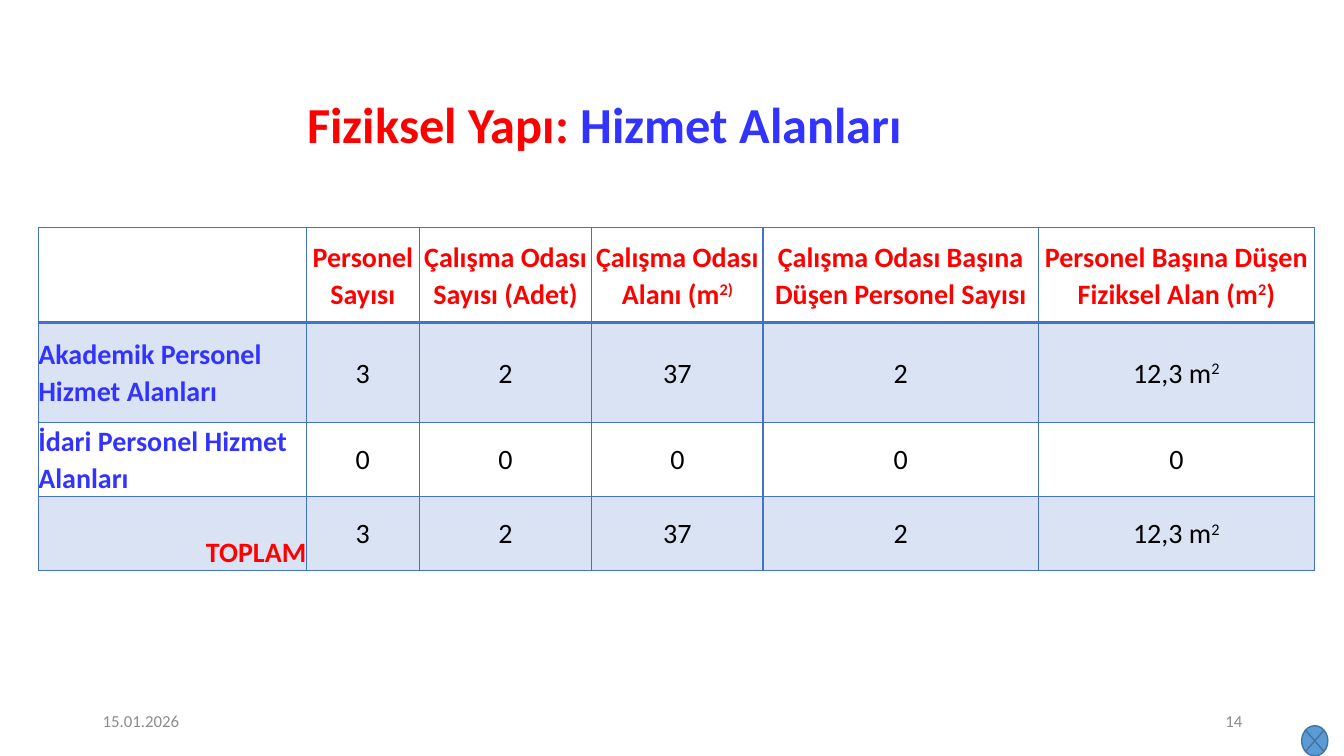
import pptx
import pptx.util
import pptx.dml.color
import pptx.enum.shapes
import pptx.enum.text
import pptx.oxml
import pptx.oxml.ns

RGB = pptx.dml.color.RGBColor
RED = RGB(0xFF, 0x00, 0x00)
BLUE = RGB(0x33, 0x33, 0xFF)
BLACK = RGB(0x00, 0x00, 0x00)
GRAY = RGB(0x8C, 0x8C, 0x8C)
BAND = RGB(0xDA, 0xE3, 0xF3)
BORDER = RGB(0x44, 0x72, 0xC4)
MARK_FILL = RGB(0x5B, 0x9B, 0xD5)
MARK_LINE = RGB(0x43, 0x73, 0x9E)

WIDTH = pptx.util.Inches(13.33)
HEIGHT = pptx.util.Inches(7.5)
ALIGN = pptx.enum.text.PP_ALIGN
ANCHOR = pptx.enum.text.MSO_ANCHOR

COLUMNS = [19.95, 8.4, 12.83, 12.75, 20.48, 20.55]
ROWS = [12.53, 13.2, 9.78, 9.78]
CELLS = [
    ["", "Personel Sayısı", "Çalışma Odası Sayısı (Adet)", "Çalışma Odası Alanı (m^2)",
     "Çalışma Odası Başına Düşen Personel Sayısı",
     "Personel Başına Düşen Fiziksel Alan (m^2^)"],
    ["Akademik Personel Hizmet Alanları", "3", "2", "37", "2", "12,3 m^2"],
    ["İdari Personel Hizmet Alanları", "0", "0", "0", "0", "0"],
    ["TOPLAM", "3", "2", "37", "2", "12,3 m^2"],
]


def across(percent):
    return round(WIDTH * percent / 100)


def down(percent):
    return round(HEIGHT * percent / 100)


def place(left, top, width, height):
    return across(left), down(top), across(width), down(height)


def apply(target, values):
    for name, value in values.items():
        setattr(target, name, value)


def add_run(p, text, size, color, bold=False):
    r = p.add_run()
    r.text = text
    apply(r.font, {"name": "Calibri", "size": pptx.util.Pt(size), "bold": bold})
    r.font.color.rgb = color
    return r


def add_text(s, box, runs, size, align, bold=False, spacing=1.0):
    tf = s.shapes.add_textbox(*place(*box)).text_frame
    apply(tf, {"word_wrap": True, "vertical_anchor": ANCHOR.MIDDLE})
    p = tf.paragraphs[0]
    apply(p, {"alignment": align, "line_spacing": spacing})
    for text, color in runs:
        add_run(p, text, size, color, bold)


def add_mark(s, box):
    sp = s.shapes.add_shape(
        pptx.enum.shapes.MSO_SHAPE.FLOWCHART_SUMMING_JUNCTION, *place(*box))
    sp.shadow.inherit = False
    sp.fill.solid()
    sp.fill.fore_color.rgb = MARK_FILL
    sp.line.color.rgb = MARK_LINE
    sp.line.width = pptx.util.Pt(1)


def set_borders(cell, widths):
    tcPr = cell._tc.get_or_add_tcPr()
    for side, width in zip("LRTB", widths):
        tcPr.append(pptx.oxml.parse_xml(
            f'<a:ln{side} {pptx.oxml.ns.nsdecls("a")} w="{pptx.util.Pt(width)}">'
            f'<a:solidFill><a:srgbClr val="{BORDER}"/></a:solidFill></a:ln{side}>'))


def cell_style(row, column):
    if row == 0:
        return RED, True, ALIGN.CENTER, ANCHOR.MIDDLE
    if column:
        return BLACK, False, ALIGN.CENTER, ANCHOR.MIDDLE
    if row == len(ROWS) - 1:
        return RED, True, ALIGN.RIGHT, ANCHOR.BOTTOM
    return BLUE, True, ALIGN.LEFT, ANCHOR.MIDDLE


def fill_cell(cell, text, row, column):
    color, bold, align, anchor = cell_style(row, column)
    apply(cell, {"margin_left": 0, "margin_right": 0, "margin_top": 0,
                 "margin_bottom": 0, "vertical_anchor": anchor})
    set_borders(cell, (1, 1, 2 if row == 1 else 1, 2 if row == 0 else 1))
    if row % 2:
        cell.fill.solid()
        cell.fill.fore_color.rgb = BAND
    else:
        cell.fill.background()
    p = cell.text_frame.paragraphs[0]
    apply(p, {"alignment": align, "line_spacing": 1.07})
    for i, part in enumerate(text.split("^")):
        if part:
            r = add_run(p, part, 20, color, bold)
            if i % 2:
                r.font._element.set("baseline", "30000")


def add_area_table(s, left, top):
    box = place(left, top, sum(COLUMNS), sum(ROWS))
    table = s.shapes.add_table(len(ROWS), len(COLUMNS), *box).table
    apply(table, {"first_row": False, "horz_banding": False})
    for column, width in zip(table.columns, COLUMNS):
        column.width = across(width)
    for i, height in enumerate(ROWS):
        table.rows[i].height = down(height)
        for j, text in enumerate(CELLS[i]):
            fill_cell(table.cell(i, j), text, i, j)


def main():
    prs = pptx.Presentation()
    apply(prs, {"slide_width": WIDTH, "slide_height": HEIGHT})
    s = prs.slides.add_slide(prs.slide_layouts[6])
    add_text(s, (2.85, 12.4, 84.32, 8.93),
             [("Fiziksel Yapı: ", RED), ("Hizmet Alanları", BLUE)],
             36, ALIGN.CENTER, True, 0.9)
    for left, text, align in ((6.9, "15.01.2026", ALIGN.LEFT), (70.67, "14", ALIGN.RIGHT)):
        add_text(s, (left, 92.67, 22.5, 5.33), [(text, GRAY)], 12, align)
    add_mark(s, (96.85, 96, 1.95, 4))
    add_area_table(s, 2.85, 30.13)
    prs.save("out.pptx")


if __name__ == "__main__":
    main()
